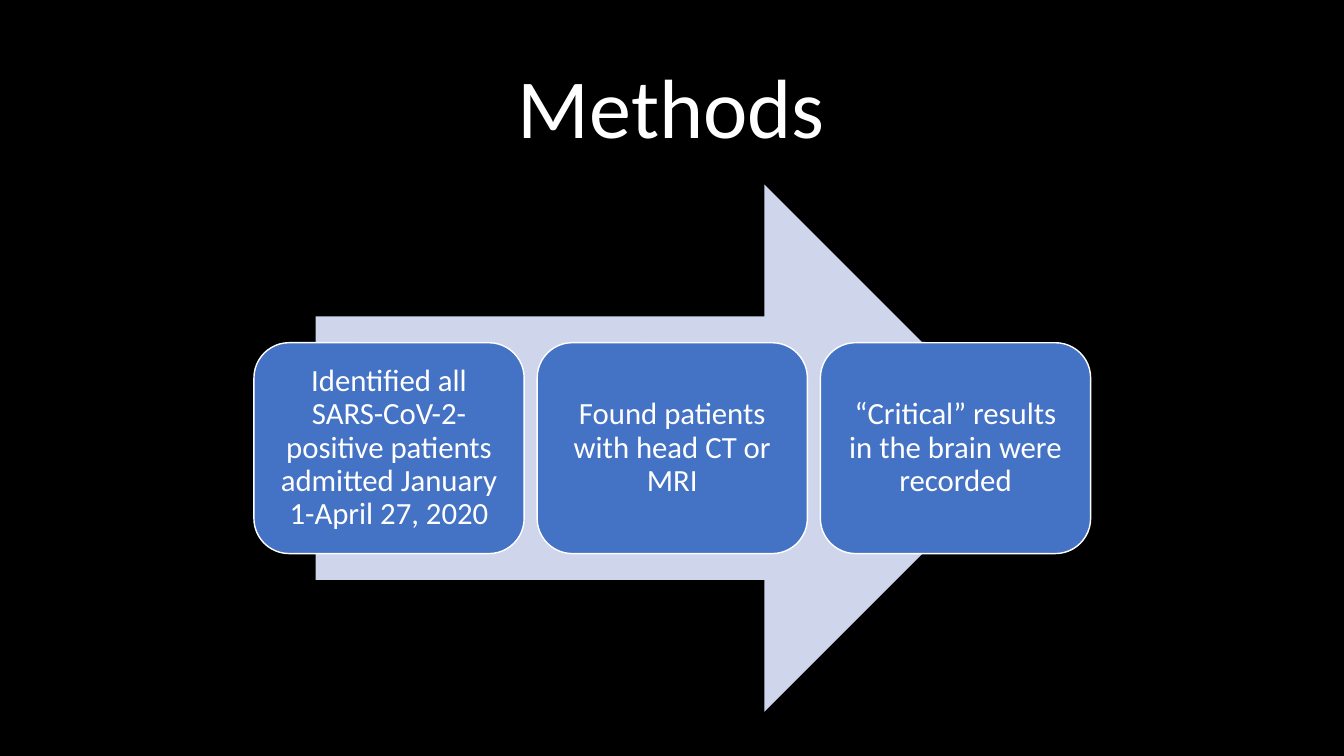
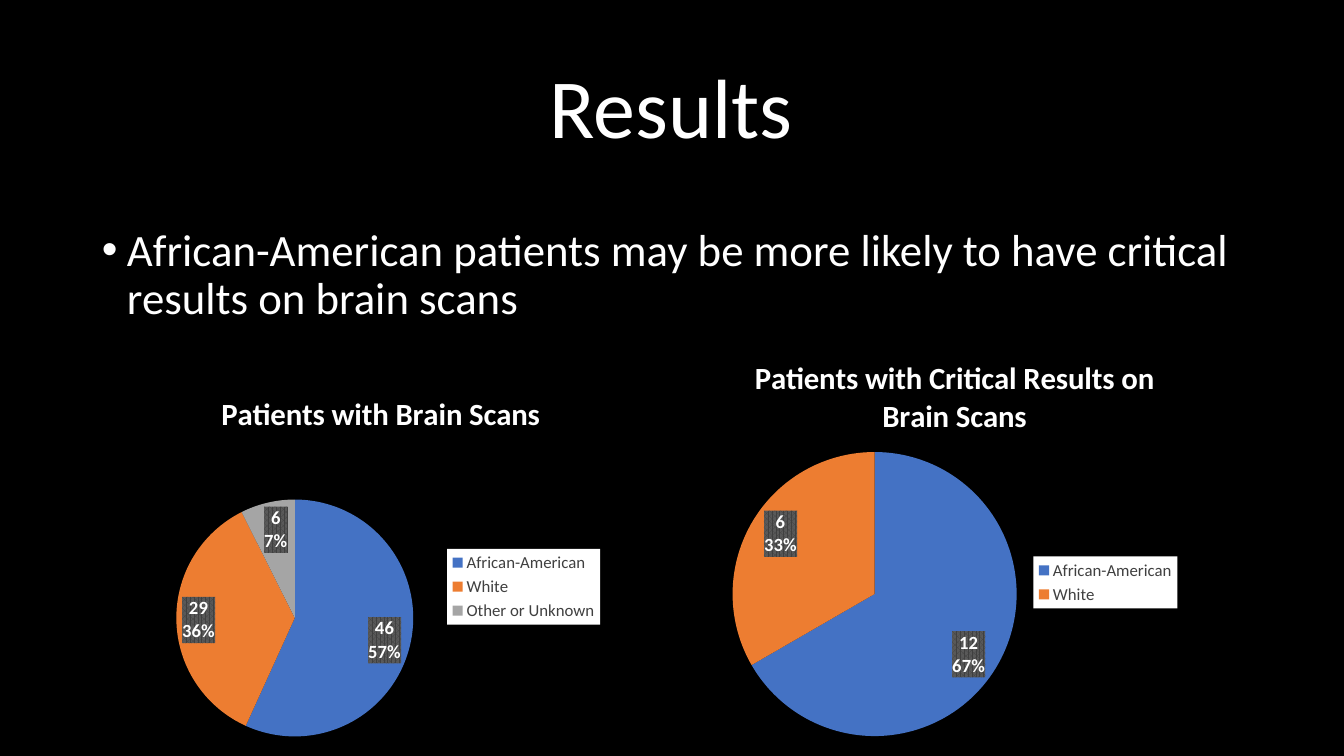
from lxml.etree import SubElement, fromstring
from pptx import Presentation
from pptx.chart.data import CategoryChartData
from pptx.dml.color import RGBColor
from pptx.enum.chart import XL_CHART_TYPE as ChartType
from pptx.enum.chart import XL_LABEL_POSITION as LabelPosition
from pptx.enum.chart import XL_LEGEND_POSITION as LegendPosition
from pptx.enum.shapes import MSO_SHAPE as Shape
from pptx.enum.text import MSO_ANCHOR as Anchor
from pptx.enum.text import MSO_AUTO_SIZE as AutoSize
from pptx.enum.text import PP_ALIGN as Align
from pptx.oxml.ns import nsdecls, qn
from pptx.util import Pt

BLACK, WHITE, GREY = "000000", "FFFFFF", "404040"
BLUE, PALE_BLUE = "4472C4", "CFD5EA"
SLICES = [BLUE, "ED7D31", "A5A5A5"]
FONT = "Calibri"
TITLE_ONLY, TITLE_AND_BODY = 5, 1

LABEL_FILL = f"""<c:spPr {nsdecls("c", "a")}><a:pattFill prst="pct75">
<a:fgClr><a:srgbClr val="404040"/></a:fgClr>
<a:bgClr><a:srgbClr val="595959"/></a:bgClr>
</a:pattFill><a:ln><a:noFill/></a:ln></c:spPr>"""
LEGEND_FILL = f"""<c:spPr {nsdecls("c", "a")}><a:solidFill>
<a:srgbClr val="{WHITE}"/></a:solidFill></c:spPr>"""


def color(value):
    """Turn a hex string into a colour."""
    return RGBColor.from_string(value)


def apply(target, formats):
    """Set every attribute named in a dict of format values."""
    for name, value in formats.items():
        setattr(target, name, value)


def paint(shape, fill):
    """Give a shape a solid fill and no shadow."""
    shape.shadow.inherit = False
    shape.fill.solid()
    shape.fill.fore_color.rgb = color(fill)


def style_font(font, size, ink=WHITE, bold=False):
    """Format a font in the deck's typeface."""
    apply(font, {"name": FONT, "size": Pt(size), "bold": bold})
    font.color.rgb = color(ink)


def set_layout(parent, index, target=None, **fractions):
    """Fix the place of a chart part as fractions of the chart."""
    for old in parent.findall(qn("c:layout")):
        parent.remove(old)
    layout = parent.makeelement(qn("c:layout"))
    parent.insert(index, layout)
    manual = SubElement(layout, qn("c:manualLayout"))
    settings = {"layoutTarget": target} if target else {}
    settings.update(xMode="edge", yMode="edge", **fractions)
    for name, value in settings.items():
        SubElement(manual, qn(f"c:{name}")).set("val", str(value))


class Builder:
    """Hold the deck's style and the current page."""

    def __init__(self):
        """Start a wide deck on a black background."""
        self.deck = Presentation()
        apply(self.deck, {"slide_width": Pt(960), "slide_height": Pt(540)})
        fill = self.deck.slide_master.background.fill
        fill.solid()
        fill.fore_color.rgb = color(BLACK)

    def add_page(self, layout, title):
        """Add a page with its centred title."""
        self.page = self.deck.slides.add_slide(self.deck.slide_layouts[layout])
        box = self.page.shapes.title
        self.fill_box(box, title, 60, (65.5, 27.4, 828, 104.4), Anchor.MIDDLE)

    def fill_box(self, box, text, size, place, anchor, align=Align.CENTER):
        """Move a placeholder and fill in its one paragraph."""
        apply(box, dict(zip(("left", "top", "width", "height"), map(Pt, place))))
        frame = box.text_frame
        apply(frame, {"word_wrap": True, "auto_size": AutoSize.NONE, "vertical_anchor": anchor})
        return self.fill_text(frame, text, size, align)

    def fill_text(self, frame, text, size, align):
        """Fill in the one paragraph of a text frame."""
        para = frame.paragraphs[0]
        apply(para, {"alignment": align, "line_spacing": 0.9})
        span = para.add_run()
        span.text = text
        style_font(span.font, size)
        return para

    def add_bullet(self, text):
        """Put one bullet into the body placeholder."""
        box = self.page.placeholders[1]
        para = self.fill_box(box, text, 32, (65.5, 159, 828, 88), Anchor.TOP, Align.LEFT)
        para.space_before = Pt(10)
        indents = para._p.get_or_add_pPr()
        indents.set("marL", str(Pt(18)))
        indents.set("indent", str(Pt(-18)))

    def add_shape(self, kind, place, fill):
        """Add a filled shape without an outline."""
        shape = self.page.shapes.add_shape(kind, *map(Pt, place))
        paint(shape, fill)
        shape.line.fill.background()
        return shape

    def add_step(self, text, place):
        """Add a rounded step box with a white outline."""
        box = self.add_shape(Shape.ROUNDED_RECTANGLE, place, BLUE)
        box.line.color.rgb = color(WHITE)
        box.line.width = Pt(1)
        frame = box.text_frame
        apply(frame, {"word_wrap": True, "vertical_anchor": Anchor.MIDDLE})
        sides = ("margin_left", "margin_top", "margin_right", "margin_bottom")
        apply(frame, dict.fromkeys(sides, Pt(6.6)))
        self.fill_text(frame, text, 22, Align.CENTER)

    def add_pie(self, title, counts, place, title_at, pie_at, legend_at):
        """Add a pie chart with value and percent labels."""
        data = CategoryChartData()
        data.categories = list(counts)
        data.add_series("Series 1", list(counts.values()))
        chart = self.page.shapes.add_chart(ChartType.PIE, *map(Pt, place), data).chart
        style_font(chart.font, 10)
        chart.has_title = True
        span = chart.chart_title.text_frame.paragraphs[0].add_run()
        span.text = title
        style_font(span.font, 22, bold=True)

        chart.has_legend = True
        apply(chart.legend, {"position": LegendPosition.RIGHT, "include_in_layout": False})
        style_font(chart.legend.font, 12, GREY)

        plot = chart.plots[0]
        plot.vary_by_categories = True
        for index, fill in enumerate(SLICES[:len(counts)]):
            point = plot.series[0].points[index].format
            point.fill.solid()
            point.fill.fore_color.rgb = color(fill)
            point.line.fill.background()
        plot.has_data_labels = True
        labels = plot.data_labels
        apply(labels, {"show_value": True, "show_percentage": True,
                       "position": LabelPosition.BEST_FIT})
        style_font(labels.font, 13.3, bold=True)
        self.finish_pie(chart.element, title_at, pie_at, legend_at)

    def finish_pie(self, space, title_at, pie_at, legend_at):
        """Place the parts of a pie and fill its labels and legend."""
        heading, area, legend = (space.find(f"{qn('c:chart')}/{qn(name)}")
                                 for name in ("c:title", "c:plotArea", "c:legend"))
        set_layout(heading, 1, **dict(zip("xy", title_at)))
        set_layout(area, 0, "inner", **dict(zip("xywh", pie_at)))
        set_layout(legend, 1, **dict(zip("xy", legend_at)))
        labels = area.find(f"{qn('c:pieChart')}/{qn('c:dLbls')}")
        for part, fill in ((labels, LABEL_FILL), (legend, LEGEND_FILL)):
            part.find(qn("c:txPr")).addprevious(fromstring(fill))
        separator = labels.makeelement(qn("c:separator"))
        separator.text = "\n"
        flags = ("c:showBubbleSize", "c:showPercent")
        last = next(flag for flag in map(labels.find, map(qn, flags)) if flag is not None)
        last.addnext(separator)


def main():
    """Build and save the deck."""
    builder = Builder()
    builder.add_page(TITLE_ONLY, "Methods")
    builder.add_shape(Shape.RIGHT_ARROW, (225.4, 131.8, 509, 376.6), PALE_BLUE)
    steps = [
        "Identified all SARS-CoV-2-positive patients admitted January 1-April 27, 2020",
        "Found patients with head CT or MRI",
        "“Critical” results in the brain were recorded",
    ]
    width, gap = 193, 9.3
    for index, step in enumerate(steps):
        builder.add_step(step, (181.4 + index * (width + gap), 244.8, width, 150.6))

    builder.add_page(TITLE_AND_BODY, "Results")
    builder.add_bullet("African-American patients may be more likely to have critical "
                       "results on brain scans")
    builder.add_pie(
        "Patients with Brain Scans",
        {"African-American": 46, "White": 29, "Other or Unknown": 6},
        place=(65.5, 260, 403, 275), title_at=(0.22, 0.06),
        pie_at=(0.15, 0.35, 0.42, 0.62), legend_at=(0.63, 0.48))
    builder.add_pie(
        "Patients with Critical Results on Brain Scans",
        {"African-American": 12, "White": 6},
        place=(479.5, 236, 398, 299), title_at=(0.14, 0.05),
        pie_at=(0.11, 0.29, 0.51, 0.68), legend_at=(0.65, 0.54))
    builder.deck.save("out.pptx")


if __name__ == "__main__":
    main()
